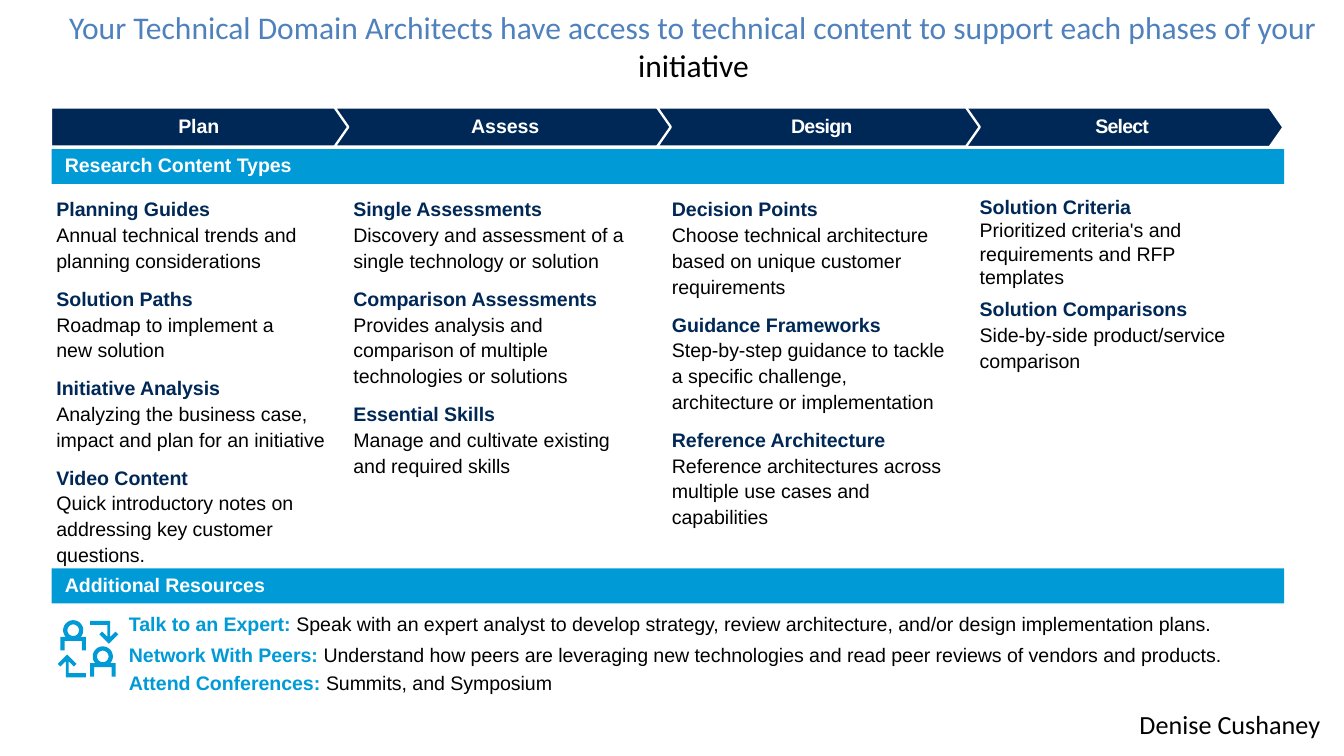
from copy import deepcopy
from dataclasses import dataclass
from math import cos, radians, sin

from pptx import Presentation
from pptx.dml.color import RGBColor as RGB
from pptx.enum.shapes import MSO_SHAPE as SHAPE
from pptx.enum.text import MSO_ANCHOR as ANCHOR, MSO_AUTO_SIZE as AUTO, PP_ALIGN as ALIGN
from pptx.oxml.ns import qn
from pptx.util import Inches, Pt

WIDTH = Inches(10)
HEIGHT = WIDTH * 9 // 16
COLS = 100
ROWS = COLS * 9 / 16


@dataclass(frozen=True)
class Theme:
    navy: RGB = RGB(0x00, 0x28, 0x56)
    sky: RGB = RGB(0x00, 0x9A, 0xD7)
    blue: RGB = RGB(0x4F, 0x81, 0xBD)
    black: RGB = RGB(0, 0, 0)
    white: RGB = RGB(0xFF, 0xFF, 0xFF)
    sans: str = "Arial"
    heading: str = "Calibri"
    title: float = 16.9
    body: float = 10.5
    signature: float = 14


T = Theme()


@dataclass(frozen=True)
class Box:
    x: float
    y: float
    w: float
    h: float

    def emu(self):
        col, row = WIDTH / COLS, HEIGHT / ROWS
        return [round(v) for v in (self.x * col, self.y * row, self.w * col, self.h * row)]


PHASES = [
    ("Plan", Box(3.8, 8, 22.5, 2.9), 0, 0, Box(4.2, 14.2, 20.9, 32.9), [
        ("Planning Guides", "Annual technical trends and planning considerations"),
        ("Solution Paths", "Roadmap to implement a\vnew solution"),
        ("Initiative Analysis", "Analyzing the business case, impact and plan for an initiative"),
        ("Video Content", "Quick introductory notes on addressing key customer questions."),
    ]),
    ("Assess", Box(24.9, 8, 25.4, 2.9), 0, 0, Box(26.3, 14.2, 21.7, 21.5), [
        ("Single Assessments", "Discovery and assessment of a single technology or solution"),
        ("Comparison Assessments",
         "Provides analysis and comparison of multiple technologies or solutions"),
        ("Essential Skills", "Manage and cultivate existing and required skills"),
    ]),
    ("Select", Box(71.5, 8, 24, 2.95), -40, 0, Box(72.9, 14.2, 21.7, 13.7), [
        ("Solution Criteria", "Prioritized criteria's and requirements and RFP templates"),
        ("Solution Comparisons", "Side-by-side product/service comparison"),
    ]),
    ("Design", Box(48.9, 8, 24, 2.9), -40, 0.05, Box(50, 14.2, 21.7, 28.2), [
        ("Decision Points", "Choose technical architecture based on unique customer requirements"),
        ("Guidance Frameworks",
         "Step-by-step guidance to tackle a specific challenge, architecture or implementation"),
        ("Reference Architecture",
         "Reference architectures across multiple use cases and capabilities"),
    ]),
]

RESOURCES = [
    (45.7, "Talk to an Expert: ",
     "Speak with an expert analyst to develop strategy, review architecture, "
     "and/or design implementation plans."),
    (48.05, "Network With Peers: ",
     "Understand how peers are leveraging new technologies and read peer reviews "
     "of vendors and products."),
    (50.1, "Attend Conferences: ", "Summits, and Symposium"),
]


def style(r, color, size=T.body, name=T.sans, bold=False):
    r.font.size, r.font.name, r.font.bold = Pt(size), name, bold
    r.font.color.rgb = color


def set_margins(tf, left, top, right, bottom):
    tf.margin_left, tf.margin_top = Inches(left), Inches(top)
    tf.margin_right, tf.margin_bottom = Inches(right), Inches(bottom)


def add_text(slide, box, margins=(0, 0, 0, 0)):
    tf = slide.shapes.add_textbox(*box.emu()).text_frame
    tf.word_wrap = True
    set_margins(tf, *margins)
    return tf


def add_title(slide, box):
    sp = slide.shapes.title
    sp.left, sp.top, sp.width, sp.height = box.emu()
    tf = sp.text_frame
    tf.word_wrap, tf.auto_size = True, AUTO.NONE
    tf.vertical_anchor = ANCHOR.MIDDLE
    p = tf.paragraphs[0]
    p.alignment = ALIGN.CENTER
    for text, color in (
        ("Your Technical Domain Architects have access to technical content "
         "to support each phases of your ", T.blue),
        ("initiative", T.black),
    ):
        r = p.add_run()
        r.text = text
        style(r, color, T.title, T.heading)


def add_block(slide, box, kind, fill, text, align):
    sp = slide.shapes.add_shape(kind, *box.emu())
    sp.shadow.inherit = False
    sp.fill.solid()
    sp.fill.fore_color.rgb = fill
    sp.line.fill.background()
    tf = sp.text_frame
    tf.word_wrap = True
    tf.vertical_anchor = ANCHOR.MIDDLE
    p = tf.paragraphs[0]
    p.text, p.alignment, p.line_spacing = text, align, 0.9
    style(p.runs[0], T.white, bold=True)
    return sp


def add_phase(slide, box, kind, name, tracking, inset):
    sp = add_block(slide, box, kind, T.navy, name, ALIGN.CENTER)
    sp.adjustments[0] = 0.35
    sp.line.color.rgb, sp.line.width = T.white, Pt(1.25)
    set_margins(sp.text_frame, inset, 0.05, 0, 0.05)
    if tracking:
        sp.text_frame.paragraphs[0].runs[0].font._element.set("spc", str(tracking))


def add_band(slide, box, text):
    add_block(slide, box, SHAPE.RECTANGLE, T.sky, text, ALIGN.LEFT)


def add_content(slide, box, entries, tight_first):
    tf = add_text(slide, box, (0, 0.03, 0.07, 0.03))
    for i, (head, body) in enumerate(entries):
        p = tf.paragraphs[0] if i == 0 else tf.add_paragraph()
        p.text = f"{head}\v{body}"
        if i or not tight_first:
            p.line_spacing, p.space_after = 1.1, Pt(3.2)
        if i:
            p.space_before = Pt(3.2)
        for n, r in enumerate(p.runs):
            style(r, T.black if n else T.navy, bold=n == 0)
        for br in p._p.findall(qn("a:br")):
            br.append(deepcopy(p.runs[0].font._element))


def add_resource(slide, box, label, text):
    p = add_text(slide, box).paragraphs[0]
    p.line_spacing = 0.9
    for words, color, bold in ((label, T.sky, True), (text, T.black, False)):
        r = p.add_run()
        r.text = words
        style(r, color, bold=bold)


def arc(cx, cy, radius, start, end):
    return [(cx + radius * cos(radians(a)), cy + radius * sin(radians(a)))
            for a in range(start, end - 1, -12)]


def add_peers_icon(slide, box):
    body = [(6, 16), (19, 16), (19, 23), (22, 23), (22, 13), *arc(12.5, 8, 7.5, 42, -222),
            (3, 13), (3, 23), (6, 23)]
    face = arc(12.5, 8, 4.3, 360, 0)
    arrow = [(38, 13), (34, 9), (32, 11), (39, 18), (46, 11), (44, 9), (40, 13),
             (40, 1), (25, 1), (25, 4), (38, 4)]
    outlines = [body, face, arrow]
    outlines += [[(x + 22, y + 19.5) for x, y in part] for part in (body, face)]
    outlines.append([(47 - x, 44 - y) for x, y in arrow])

    left, top, width, height = box.emu()
    paths = [[(left + x * width / 46, top + y * height / 43) for x, y in part]
             for part in outlines]
    fb = slide.shapes.build_freeform(*paths[0][0], scale=1.0)
    fb.add_line_segments(paths[0][1:], close=True)
    for points in paths[1:]:
        fb.move_to(*points[0])
        fb.add_line_segments(points[1:], close=True)
    sp = fb.convert_to_shape()
    sp.shadow.inherit = False
    sp.fill.solid()
    sp.fill.fore_color.rgb = T.sky
    sp.line.fill.background()


def add_signature(slide, box):
    tf = add_text(slide, box, (0.1, 0.05, 0.1, 0.05))
    tf.text = "Denise Cushaney"
    tf.word_wrap = False
    style(tf.paragraphs[0].runs[0], T.black, T.signature, T.heading)


def main():
    prs = Presentation()
    prs.slide_width, prs.slide_height = WIDTH, HEIGHT
    slide = prs.slides.add_slide(prs.slide_layouts[5])
    add_title(slide, Box(3.8, 1.55, 95.6, 3.7))
    for name, head, tracking, inset, column, entries in PHASES:
        kind = SHAPE.PENTAGON if name == "Plan" else SHAPE.CHEVRON
        add_phase(slide, head, kind, name, tracking, inset)
        add_content(slide, column, entries, tight_first=name == "Select")
    add_band(slide, Box(3.85, 11.1, 91.7, 2.6), "Research Content Types")
    add_band(slide, Box(3.85, 42.3, 91.7, 2.6), "Additional Resources")
    for row, label, text in RESOURCES:
        add_resource(slide, Box(9.6, row, 86.7, 1.6), label, text)
    add_peers_icon(slide, Box(4.2, 46.1, 4.6, 4.3))
    add_signature(slide, Box(83.8, 52.2, 16.2, 4))
    prs.save("out.pptx")


if __name__ == "__main__":
    main()
